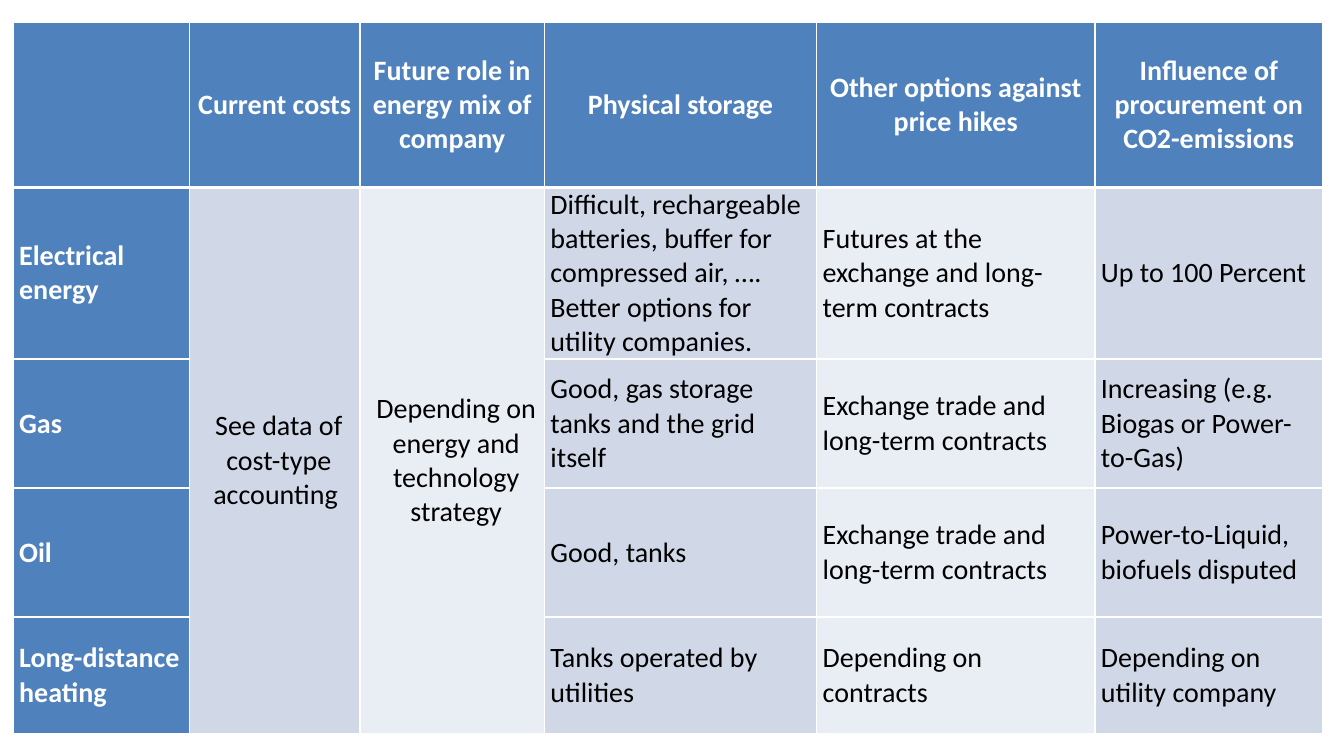
from pptx import Presentation, util as u
from pptx.dml.color import RGBColor
from pptx.enum import text
from pptx.oxml import parse_xml
from pptx.oxml.ns import nsdecls

WHITE = RGBColor(0xFF, 0xFF, 0xFF)
BLACK = RGBColor(0, 0, 0)
BLUE = RGBColor(0x4F, 0x81, 0xBD)
MID = RGBColor(0xD0, 0xD8, 0xE8)
PALE = RGBColor(0xE9, 0xED, 0xF4)

BOX = (0.13, 0.22, 12.99, 7.0)
COLS = (1.75, 1.69, 1.83, 2.7, 2.76, 2.26)
ROWS = (1.64, 1.64, 1.28, 1.28, 1.16)
SPANS = (1, 2)  # columns whose body is one tall cell
DATA = [
    ["", "Current costs", "Future role in energy mix of company",
     "Physical storage", "Other options against price hikes",
     "Influence of procurement on CO2-emissions"],
    ["Electrical energy", "See data of cost-type accounting ",
     "Depending on energy and technology strategy",
     "Difficult, rechargeable batteries, buffer for compressed air, …. "
     "Better options for utility companies.",
     "Futures at the exchange and long-term contracts",
     "Up to 100 Percent"],
    ["Gas", "", "", "Good, gas storage tanks and the grid itself",
     "Exchange trade and long-term contracts",
     "Increasing (e.g. Biogas or Power-to-Gas)"],
    ["Oil", "", "", "Good, tanks",
     "Exchange trade and long-term contracts",
     "Power-to-Liquid, biofuels disputed"],
    ["Long-distance heating", "", "", "Tanks operated by utilities",
     "Depending on contracts", "Depending on utility company"],
]


def edge(cell, row):
    """Draw white borders, thick between the header and the body."""
    widths = {"L": 1, "R": 1, "T": 3 if row == 1 else 1,
              "B": 3 if row == 0 else 1}
    props = cell._tc.get_or_add_tcPr()
    for spot, (side, width) in enumerate(widths.items()):
        props.insert(spot, parse_xml(
            f'<a:ln{side} {nsdecls("a")} w="{u.Pt(width)}"><a:solidFill>'
            f'<a:srgbClr val="{WHITE}"/></a:solidFill></a:ln{side}>'))


def write(cell, words, head, mid, indent):
    cell.vertical_anchor = text.MSO_ANCHOR.MIDDLE
    cell.margin_left = cell.margin_right = u.Inches(0.06)
    cell.margin_top = cell.margin_bottom = 0
    if not words:
        return
    para = cell.text_frame.paragraphs[0]
    para.text = words
    para.alignment = text.PP_ALIGN.CENTER if mid else text.PP_ALIGN.LEFT
    para.space_after = u.Pt(6)
    if indent:
        para._p.get_or_add_pPr().set("marL", str(u.Inches(0.08)))
    font = para.runs[0].font
    font.name, font.size, font.bold = "Calibri", u.Pt(20), head
    font.color.rgb = WHITE if head else BLACK


def matrix(slide, box):
    left, top, width, height = box
    table = slide.shapes.add_table(
        len(ROWS), len(COLS), u.Inches(left), u.Inches(top),
        u.Inches(width), u.Inches(height)).table
    table.first_row = table.horz_banding = False
    for col, share in zip(table.columns, COLS):
        col.width = u.Inches(width * share / sum(COLS))
    for row, share in zip(table.rows, ROWS):
        row.height = u.Inches(height * share / sum(ROWS))
    for r, line in enumerate(DATA):
        for c, words in enumerate(line):
            cell = table.cell(r, c)
            head = r == 0 or c == 0
            tall = r > 0 and c in SPANS
            write(cell, words, head, r == 0 or tall, tall)
            cell.fill.solid()
            cell.fill.fore_color.rgb = BLUE if head else MID if c % 2 else PALE
            edge(cell, r)
    for c in SPANS:
        table.cell(1, c).merge(table.cell(len(ROWS) - 1, c))


def main():
    deck = Presentation()
    deck.slide_width, deck.slide_height = u.Inches(13.33), u.Inches(7.5)
    matrix(deck.slides.add_slide(deck.slide_layouts[6]), BOX)
    deck.save("out.pptx")


if __name__ == "__main__":
    main()
